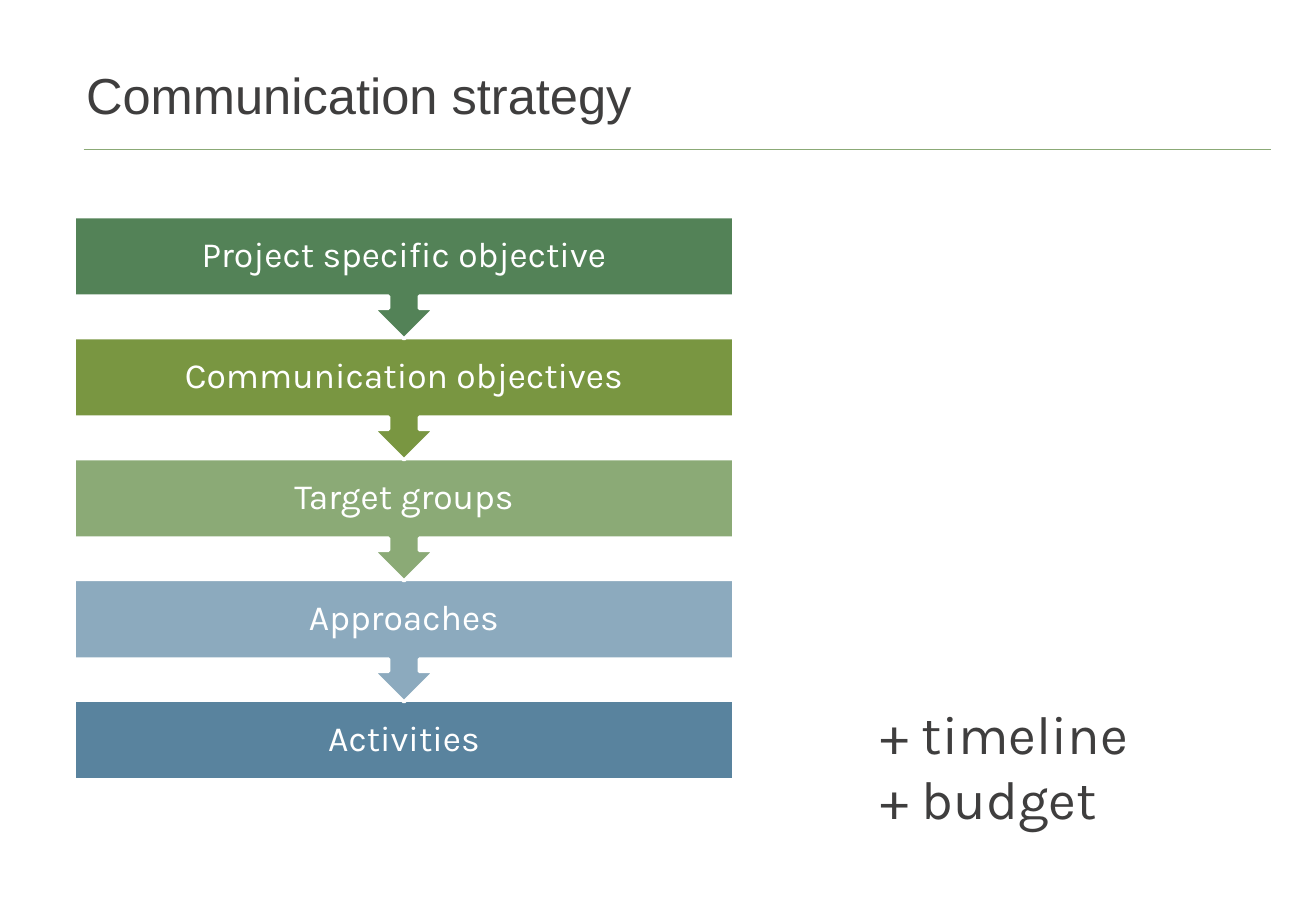
from dataclasses import dataclass

from lxml import etree
from pptx import Presentation
from pptx import util as u
from pptx.dml.color import RGBColor
from pptx.enum import shapes, text
from pptx.oxml.ns import qn


@dataclass(frozen=True)
class Theme:
    ink: str = "3F3E3E"
    white: str = "FFFFFF"
    rule: str = "8BAA76"
    heading_font: str = "Arial"
    body_font: str = "Karla"
    title_size: float = 30
    step_size: float = 21
    extras_size: float = 32


@dataclass(frozen=True)
class Step:
    label: str
    fill: str


THEME = Theme()
STEPS = [
    Step("Project specific objective", "538257"),
    Step("Communication objectives", "799641"),
    Step("Target groups", "8BAA76"),
    Step("Approaches", "8CAABE"),
    Step("Activities", "59839E"),
]

# Step geometry in centimetres
STEP_LEFT, STEP_TOP, STEP_WIDTH = 1.55, 4.53, 13.79
STEP_PITCH, BAR_HEIGHT, CALLOUT_HEIGHT = 2.53, 1.66, 2.56


def write(frame, lines: list[str], *, font: str, size: float, color: str,
          align=text.PP_ALIGN.LEFT, anchor=text.MSO_ANCHOR.TOP,
          inset: float | None = None, line_spacing: float | None = None) -> None:
    """Fill a text frame with one paragraph per line."""
    frame.word_wrap = True
    frame.vertical_anchor = anchor
    if inset is not None:
        frame.margin_left = frame.margin_right = u.Cm(inset)
        frame.margin_top = frame.margin_bottom = u.Cm(inset)
    for index, line in enumerate(lines):
        paragraph = frame.add_paragraph() if index else frame.paragraphs[0]
        paragraph.alignment = align
        if line_spacing is not None:
            paragraph.line_spacing = line_spacing
        run = paragraph.add_run()
        run.text = line
        run.font.name = font
        run.font.size = u.Pt(size)
        run.font.color.rgb = RGBColor.from_string(color)


def add_rule(slide) -> None:
    rule = slide.shapes.add_connector(
        shapes.MSO_CONNECTOR.STRAIGHT, u.Cm(1.75), u.Cm(3.12), u.Cm(26.57), u.Cm(3.12))
    rule.line.color.rgb = RGBColor.from_string(THEME.rule)
    rule.line.width = u.Pt(0.5)
    etree.SubElement(rule.line._get_or_add_ln().getparent(), qn("a:effectLst"))


def add_step(slide, index: int, step: Step) -> None:
    """Draw a bar, with an arrow to the next step unless it is the last."""
    is_last = index == len(STEPS) - 1
    kind = shapes.MSO_SHAPE.RECTANGLE if is_last else shapes.MSO_SHAPE.DOWN_ARROW_CALLOUT
    height = BAR_HEIGHT if is_last else CALLOUT_HEIGHT
    bar = slide.shapes.add_shape(
        kind, u.Cm(STEP_LEFT), u.Cm(STEP_TOP + index * STEP_PITCH),
        u.Cm(STEP_WIDTH), u.Cm(height))
    bar.shadow.inherit = False
    bar.fill.solid()
    bar.fill.fore_color.rgb = RGBColor.from_string(step.fill)
    bar.line.color.rgb = RGBColor.from_string(THEME.white)
    bar.line.width = u.Pt(2)
    write(bar.text_frame, [step.label], font=THEME.body_font, size=THEME.step_size,
          color=THEME.white, align=text.PP_ALIGN.CENTER,
          anchor=text.MSO_ANCHOR.MIDDLE, inset=0.4, line_spacing=0.9)


def main() -> None:
    deck = Presentation()
    deck.slide_width, deck.slide_height = u.Cm(27.51), u.Cm(19.05)
    slide = deck.slides.add_slide(deck.slide_layouts[6])

    # Heading
    add_rule(slide)
    title = slide.shapes.add_textbox(u.Cm(1.55), u.Cm(0.33), u.Cm(19.35), u.Cm(2.41))
    write(title.text_frame, ["Communication strategy"], font=THEME.heading_font,
          size=THEME.title_size, color=THEME.ink, anchor=text.MSO_ANCHOR.BOTTOM)

    # Strategy steps, last one first so each arrow lies over the next bar
    for index, step in reversed(list(enumerate(STEPS))):
        add_step(slide, index, step)

    # Additions beside the steps
    extras = slide.shapes.add_textbox(u.Cm(18.16), u.Cm(14.53), u.Cm(6.43), u.Cm(3))
    write(extras.text_frame, ["+ timeline", "+ budget"], font=THEME.body_font,
          size=THEME.extras_size, color=THEME.ink)

    deck.save("out.pptx")


if __name__ == "__main__":
    main()
